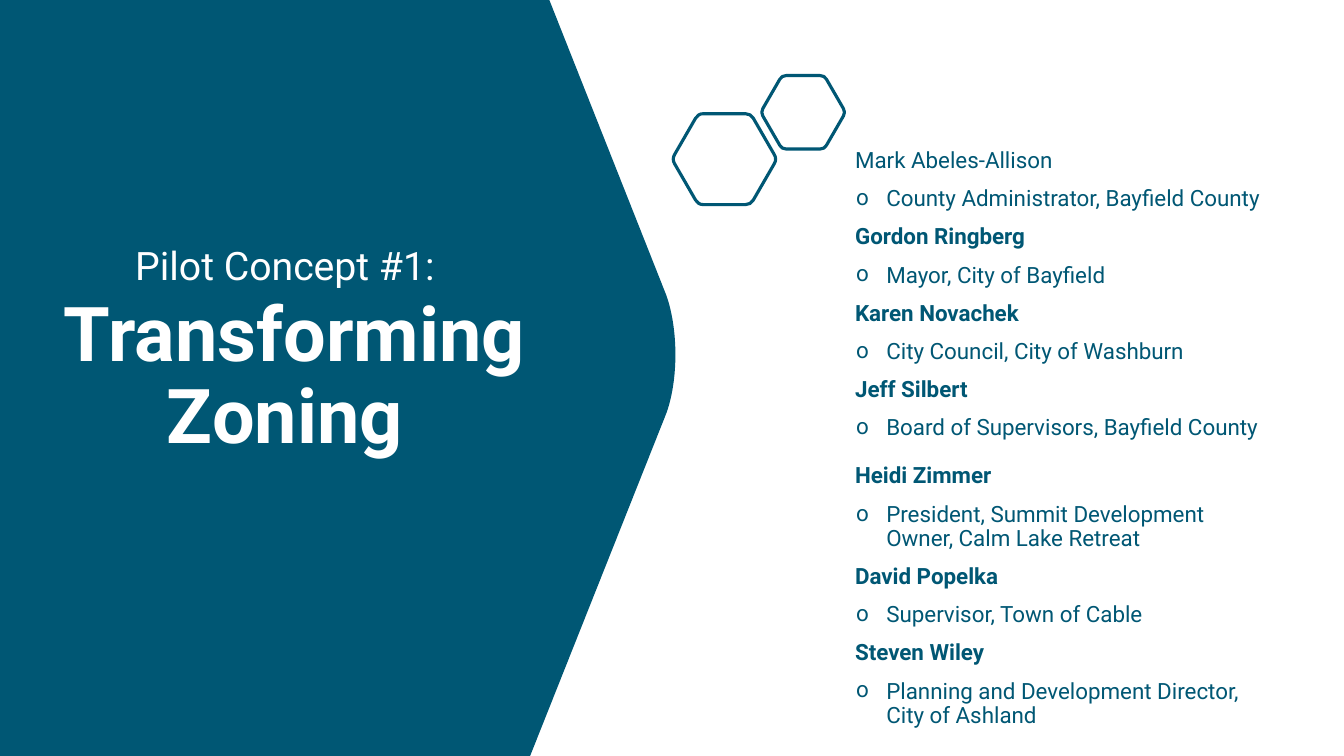
"""Build the Transforming Zoning pilot concept slide."""
import math

from lxml import etree
from pptx import Presentation
from pptx import util as u
from pptx.dml import color
from pptx.enum import text
from pptx.oxml import ns

COLORS = {"teal": "005774", "white": "FFFFFF"}
FONT = "Roboto"
WIDE, HIGH = 960, 540
PEOPLE = [
    ("Mark Abeles-Allison", ["County Administrator, Bayfield County"]),
    ("Gordon Ringberg", ["Mayor, City of Bayfield"]),
    ("Karen Novachek", ["City Council, City of Washburn"]),
    ("Jeff Silbert", ["Board of Supervisors, Bayfield County"]),
    ("Heidi Zimmer", ["President, Summit Development", "Owner, Calm Lake Retreat"]),
    ("David Popelka", ["Supervisor, Town of Cable"]),
    ("Steven Wiley", ["Planning and Development Director, ", "City of Ashland"]),
]


def rgb(name):
    return color.RGBColor.from_string(COLORS[name])


def place(shape, left, top, width, height):
    shape.left, shape.top = u.Pt(left), u.Pt(top)
    shape.width, shape.height = u.Pt(width), u.Pt(height)


def outline(parent, points, bends):
    """Draw a closed outline, curving the three points from each bend index."""
    dots = [(u.Pt(x), u.Pt(y)) for x, y in points]
    pen = parent.build_freeform(*dots[0])
    pen.add_line_segments(dots[1:], close=True)
    shape = pen.convert_to_shape()
    shape.shadow.inherit = False
    sides = list(shape.element.iter(ns.qn("a:lnTo")))
    for bend in bends:
        arc = etree.Element(ns.qn("a:cubicBezTo"))
        sides[bend - 1].addprevious(arc)
        for side in sides[bend - 1:bend + 2]:
            arc.append(side[0])
            side.getparent().remove(side)
    return shape


def add_panel(slide):
    nose = [(476, 211), (484.6, 235.4), (484.6, 271.4), (476, 295.2)]
    points = [(0, 0), (392.4, 0), *nose, (378.7, HIGH), (0, HIGH)]
    panel = outline(slide.shapes, points, [3])
    panel.fill.solid()
    panel.fill.fore_color.rgb = rgb("teal")
    panel.line.fill.background()
    slide.shapes.title.element.addprevious(panel.element)


def blend(start, end, part):
    return tuple(a + part * (b - a) for a, b in zip(start, end))


def add_hex(group, x, y, radius, cut=0.1):
    """Draw a hexagon outline with rounded corners."""
    tips = [(x + radius * math.cos(k * math.pi / 3),
             y + radius * math.sin(k * math.pi / 3)) for k in range(6)]
    points = []
    for k, tip in enumerate(tips):
        last, after = tips[k - 1], tips[(k + 1) % 6]
        points += [blend(tip, last, cut), blend(tip, last, cut / 3),
                   blend(tip, after, cut / 3), blend(tip, after, cut)]
    shape = outline(group.shapes, points, range(1, 24, 4))
    shape.fill.background()
    shape.line.color.rgb = rgb("teal")
    shape.line.width = u.Pt(2.25)


def add_run(para, words, size, ink, bold=False):
    run = para.add_run()
    run.text = words
    run.font.name, run.font.size, run.font.bold = FONT, u.Pt(size), bold
    run.font.color.rgb = rgb(ink)


def set_title(slide):
    title = slide.shapes.title
    place(title, 21.2, 72, 378, 337.7)
    title.fill.solid()
    title.fill.fore_color.rgb = rgb("teal")
    frame = title.text_frame
    frame.auto_size = text.MSO_AUTO_SIZE.NONE
    frame.vertical_anchor = text.MSO_ANCHOR.MIDDLE
    para = frame.paragraphs[0]
    para.alignment, para.line_spacing = text.PP_ALIGN.CENTER, 0.9
    add_run(para, "Pilot Concept #1:", 28, "white")
    add_run(para, " ", 54, "white", True)
    para.add_line_break()
    add_run(para, "Transforming Zoning ", 54, "white", True)


def add_dot(para):
    """Give a paragraph a hanging round bullet."""
    props = para._p.get_or_add_pPr()
    props.set("marL", str(u.Pt(22.3)))
    props.set("indent", str(-u.Pt(21.6)))
    tint = etree.SubElement(props, ns.qn("a:buClr"))
    etree.SubElement(tint, ns.qn("a:srgbClr")).set("val", COLORS["teal"])
    etree.SubElement(props, ns.qn("a:buFont")).set("typeface", FONT)
    etree.SubElement(props, ns.qn("a:buChar")).set("char", "o")


def add_line(frame, lines, bold=False, gap=10):
    first = frame.paragraphs[0]
    para = frame.add_paragraph() if first.runs else first
    para.line_spacing, para.space_before = 0.9, u.Pt(gap)
    for count, words in enumerate(lines):
        if count:
            para.add_line_break()
        add_run(para, words, 16, "teal", bold)
    return para


def add_people(slide):
    box = slide.shapes.add_textbox(u.Pt(603.7), u.Pt(103), u.Pt(356), u.Pt(436))
    frame = box.text_frame
    frame.word_wrap = True
    for count, (name, role) in enumerate(PEOPLE):
        add_line(frame, [name], count > 0, 17.2 if count == 4 else 10)
        add_dot(add_line(frame, role))


def main():
    deck = Presentation()
    deck.slide_width, deck.slide_height = u.Pt(WIDE), u.Pt(HIGH)
    slide = deck.slides.add_slide(deck.slide_layouts[5])
    set_title(slide)
    add_panel(slide)
    group = slide.shapes.add_group_shape()
    add_hex(group, 517.5, 113.7, 37.5)
    add_hex(group, 573.7, 80.2, 30.3)
    add_people(slide)
    deck.save("out.pptx")


if __name__ == "__main__":
    main()
